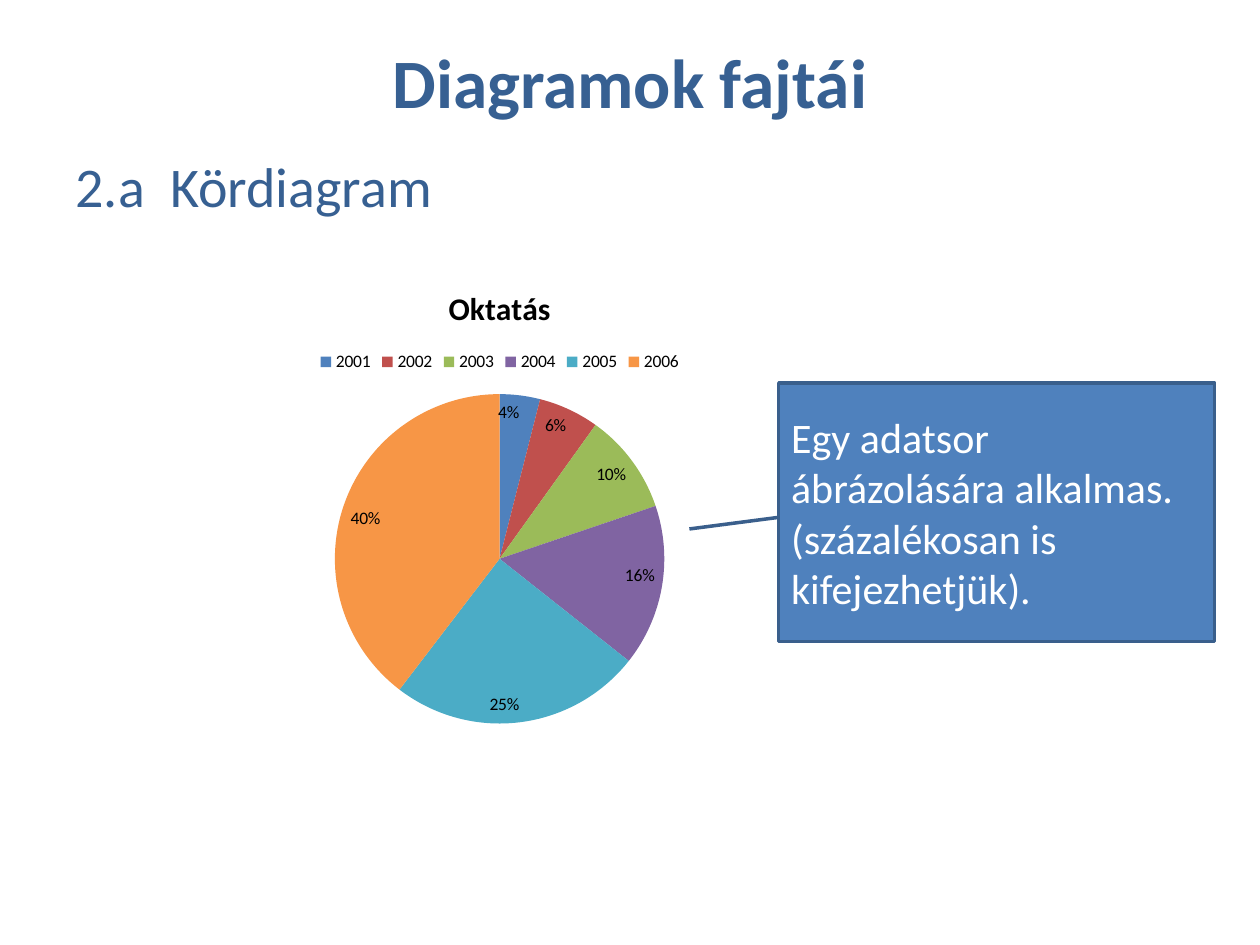
from pptx import Presentation
from pptx.chart.data import CategoryChartData
from pptx.dml.color import RGBColor
from pptx.enum.chart import XL_CHART_TYPE as ChartType
from pptx.enum.chart import XL_LABEL_POSITION as LabelPosition
from pptx.enum.chart import XL_LEGEND_POSITION as LegendPosition
from pptx.enum.shapes import MSO_SHAPE as Preset
from pptx.enum.text import MSO_ANCHOR as Anchor
from pptx.enum.text import MSO_AUTO_SIZE as AutoSize
from pptx.enum.text import PP_ALIGN as Align
from pptx.oxml.xmlchemy import OxmlElement
from pptx.util import Pt

FONT = "Calibri"
HEADING = RGBColor(0x37, 0x60, 0x92)
BLUE = RGBColor(0x4F, 0x81, 0xBD)
CALLOUT_LINE = RGBColor(0x3A, 0x5F, 0x8C)
WHITE = RGBColor(0xFF, 0xFF, 0xFF)
BLACK = RGBColor(0, 0, 0)
SLICE_COLORS = [
    BLUE,
    RGBColor(0xC0, 0x50, 0x4D),
    RGBColor(0x9B, 0xBB, 0x59),
    RGBColor(0x80, 0x64, 0xA2),
    RGBColor(0x4B, 0xAC, 0xC6),
    RGBColor(0xF7, 0x96, 0x46),
]

SHARES = {"2001": 4, "2002": 6, "2003": 10, "2004": 16, "2005": 25, "2006": 40}


def style_font(font, size, color, bold=False):
    font.name = FONT
    font.size = Pt(size)
    font.color.rgb = color
    font.bold = bold


def place(shape, left, top, width, height):
    shape.left, shape.top = Pt(left), Pt(top)
    shape.width, shape.height = Pt(width), Pt(height)


def fill_title(title, text):
    place(title, 36, 21.6, 648, 49.7)
    frame = title.text_frame
    frame.text = text
    frame.auto_size = AutoSize.NONE
    frame.vertical_anchor = Anchor.MIDDLE
    paragraph = frame.paragraphs[0]
    paragraph.alignment = Align.CENTER
    style_font(paragraph.font, 39.6, HEADING, bold=True)


def fill_body(body, number, text, indent):
    """Write a numbered heading whose text starts at a hanging indent."""
    place(body, 36, 82.8, 648, 399.6)
    frame = body.text_frame
    frame.text = f"{number}\t{text}"
    frame.auto_size = AutoSize.NONE
    paragraph = frame.paragraphs[0]
    properties = paragraph._p.get_or_add_pPr()
    properties.set("marL", str(Pt(indent)))
    properties.set("indent", str(-Pt(indent)))
    properties.append(OxmlElement("a:buNone"))
    paragraph.space_before = Pt(0)
    style_font(paragraph.font, 32, HEADING)


def add_callout(slide, text):
    callout = slide.shapes.add_shape(
        Preset.LINE_CALLOUT_1, Pt(445), Pt(218.9), Pt(249.1), Pt(147.6)
    )
    for index, value in enumerate((0.52, 0, 0.565, -0.205)):
        callout.adjustments[index] = value
    callout.shadow.inherit = False
    callout.fill.solid()
    callout.fill.fore_color.rgb = BLUE
    callout.line.color.rgb = CALLOUT_LINE
    callout.line.width = Pt(2)
    frame = callout.text_frame
    frame.word_wrap = True
    frame.vertical_anchor = Anchor.MIDDLE
    frame.text = text
    paragraph = frame.paragraphs[0]
    paragraph.alignment = Align.LEFT
    style_font(paragraph.font, 24, WHITE)


def add_pie(slide, name, shares):
    data = CategoryChartData()
    data.categories = list(shares)
    data.add_series(name, list(shares.values()))
    chart = slide.shapes.add_chart(
        ChartType.PIE, Pt(31), Pt(151.2), Pt(509), Pt(272.2), data
    ).chart
    style_font(chart.font, 10, BLACK)

    chart.has_title = True
    title = chart.chart_title
    title.include_in_layout = False
    title.text_frame.text = name
    style_font(title.text_frame.paragraphs[0].font, 18, BLACK, bold=True)

    chart.has_legend = True
    chart.legend.position = LegendPosition.TOP
    chart.legend.include_in_layout = False

    plot = chart.plots[0]
    plot.vary_by_categories = True
    series = plot.series[0]
    for index, color in enumerate(SLICE_COLORS):
        fill = series.points[index].format.fill
        fill.solid()
        fill.fore_color.rgb = color
    labels = series.data_labels
    labels.show_value = False
    labels.show_percentage = True
    labels.number_format = "0%"
    labels.number_format_is_linked = False
    labels.position = LabelPosition.INSIDE_END
    style_font(labels.font, 10, BLACK)


def main():
    presentation = Presentation()
    presentation.slide_width, presentation.slide_height = Pt(720), Pt(540)
    slide = presentation.slides.add_slide(presentation.slide_layouts[1])
    fill_title(slide.shapes.title, "Diagramok fajtái")
    fill_body(slide.placeholders[1], "2.a", "Kördiagram", indent=54)
    add_callout(
        slide,
        "Egy adatsor ábrázolására alkalmas. (százalékosan is kifejezhetjük).",
    )
    add_pie(slide, "Oktatás", SHARES)
    presentation.save("out.pptx")


if __name__ == "__main__":
    main()
